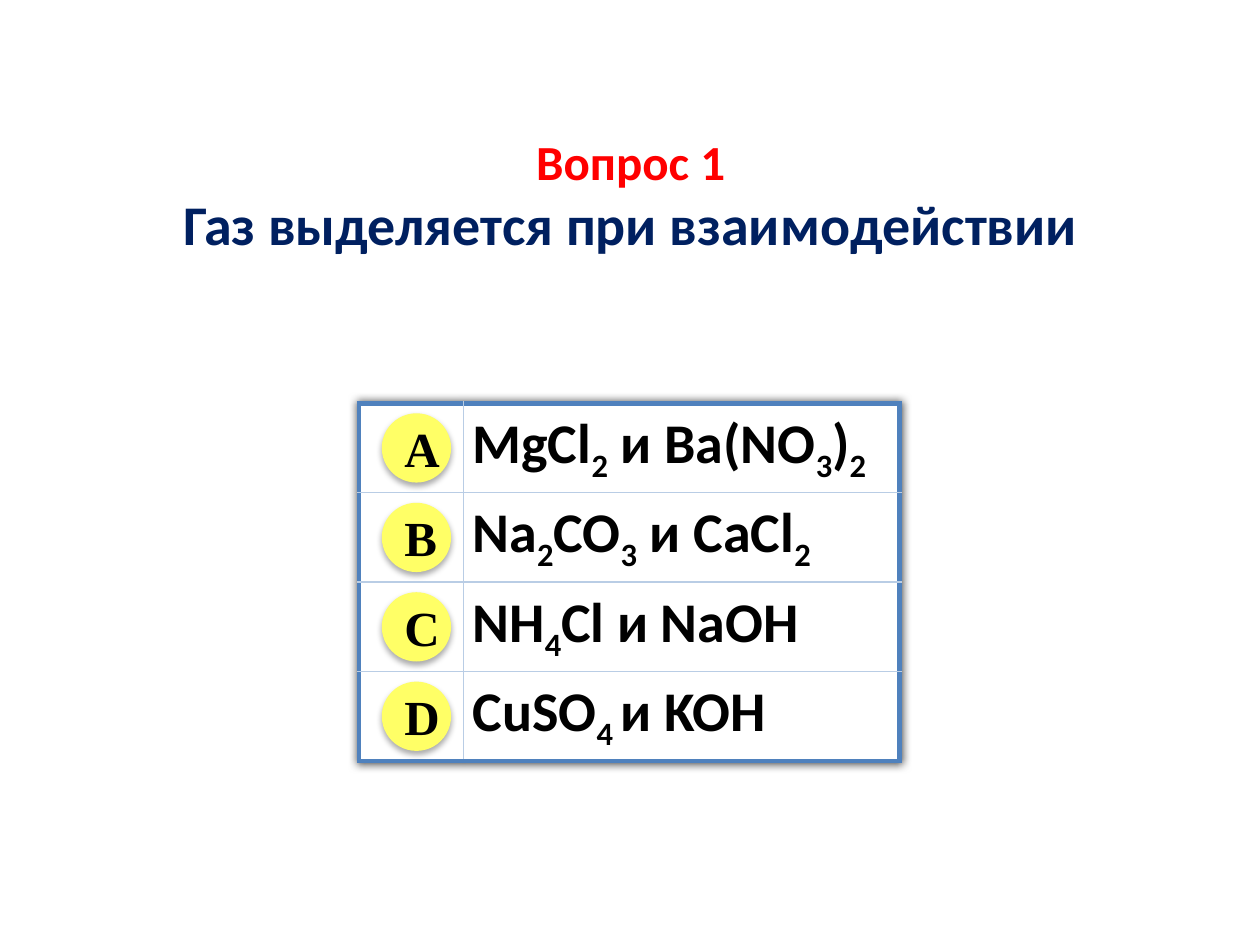
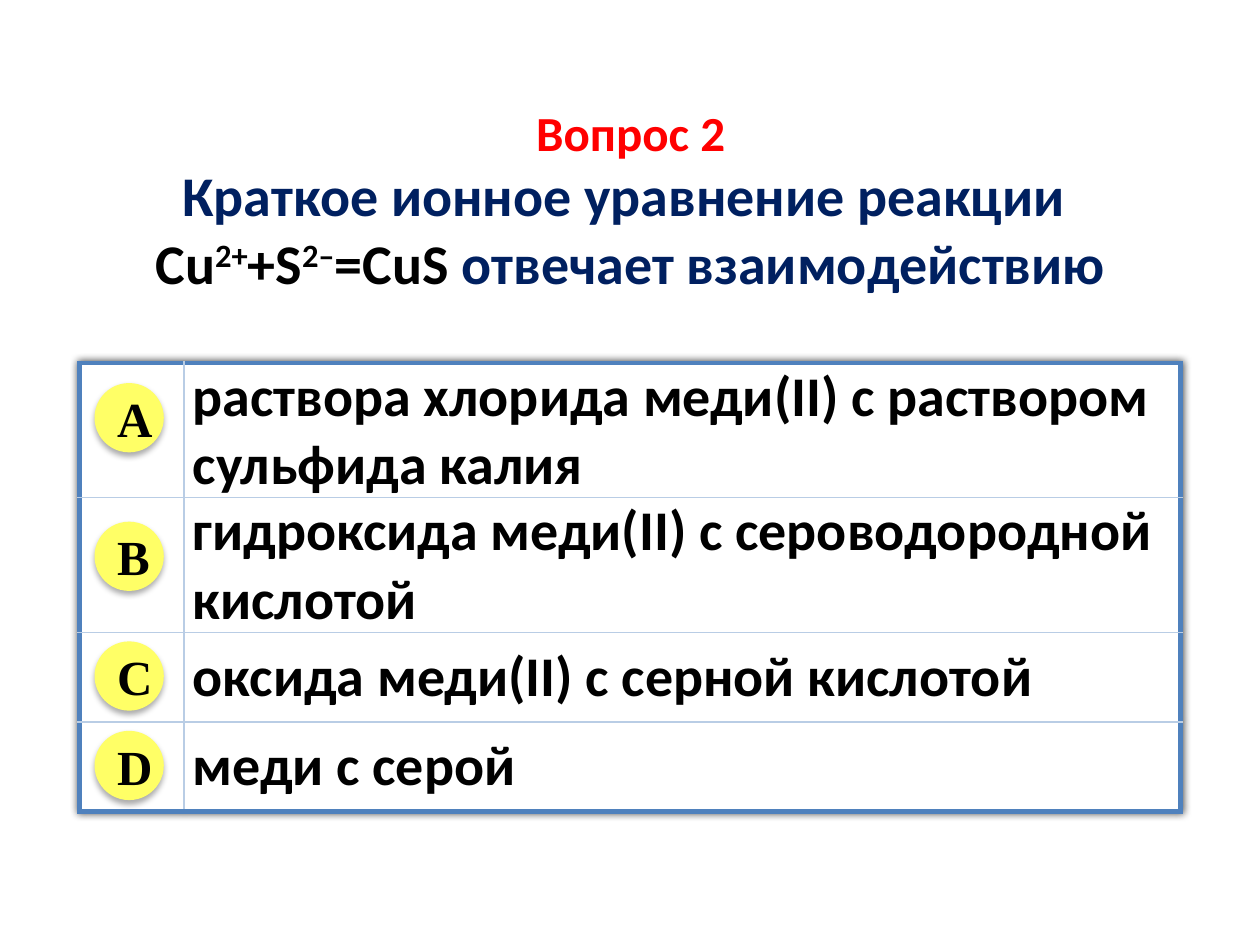
from pptx import Presentation
from pptx.dml.color import RGBColor
from pptx.enum import shapes, text
from pptx.oxml import parse_xml
from pptx.oxml.ns import nsdecls
from pptx.util import Inches, Pt

RED = RGBColor(0xFF, 0x00, 0x00)
NAVY = RGBColor(0x00, 0x20, 0x60)
BLACK = RGBColor(0x00, 0x00, 0x00)
WHITE = RGBColor(0xFF, 0xFF, 0xFF)
YELLOW = RGBColor(0xFF, 0xFF, 0x66)
FRAME_BLUE = RGBColor(0x4F, 0x81, 0xBD)
GRID_BLUE = RGBColor(0xB9, 0xCD, 0xE5)

BODY_FONT = "Calibri"
BADGE_FONT = "Times New Roman"
SUBSCRIPT, SUPERSCRIPT = -25, 30
LETTER_COLUMN = 0.83
BADGE_SIZE = 0.55


def shadow_xml(opacity, blur, distance=0):
    """Effect list with a black shadow falling downwards; lengths in points."""
    return parse_xml(
        f'<a:effectLst {nsdecls("a")}><a:outerShdw blurRad="{Pt(blur)}" '
        f'dist="{Pt(distance)}" dir="5400000" algn="ctr" rotWithShape="0">'
        f'<a:srgbClr val="000000"><a:alpha val="{opacity * 1000}"/></a:srgbClr>'
        '</a:outerShdw></a:effectLst>')


def style_paragraph(paragraph, size, font=BODY_FONT):
    paragraph.font.name = font
    paragraph.font.size = Pt(size)
    paragraph.font.bold = True


def add_formula(paragraph, formula, color, baseline):
    """Write text whose raised or lowered parts stand between bars."""
    for index, part in enumerate(formula.split("|")):
        if part:
            run = paragraph.add_run()
            run.text = part
            run.font.color.rgb = color
            if index % 2:
                run._r.get_or_add_rPr().set("baseline", str(baseline * 1000))


def add_question(slide, top, height, number, lines):
    """Fill the title: a red heading, then lines of (formula, colour) parts."""
    title = slide.shapes.title
    title.left, title.top = Inches(0.24), Inches(top)
    title.width, title.height = Inches(9.53), Inches(height)
    title.fill.solid()
    title.fill.fore_color.rgb = WHITE
    frame = title.text_frame
    frame.word_wrap = True
    frame.auto_size = text.MSO_AUTO_SIZE.SHAPE_TO_FIT_TEXT
    frame.vertical_anchor = text.MSO_ANCHOR.TOP
    heading = [(f"Вопрос {number}", RED)]
    for index, parts in enumerate([heading] + lines):
        paragraph = frame.add_paragraph() if index else frame.paragraphs[0]
        paragraph.alignment = text.PP_ALIGN.CENTER
        style_paragraph(paragraph, 32 if index else 28)
        for formula, color in parts:
            add_formula(paragraph, formula, color, SUPERSCRIPT)


def set_borders(cell, framed_sides):
    for side in "LRTB":
        color, width = (FRAME_BLUE, 3) if side in framed_sides else (GRID_BLUE, 1)
        cell._tc.get_or_add_tcPr().append(parse_xml(
            f'<a:ln{side} {nsdecls("a")} w="{Pt(width)}"><a:solidFill>'
            f'<a:srgbClr val="{color}"/></a:solidFill></a:ln{side}>'))


def add_badge(slide, left, top, letter):
    badge = slide.shapes.add_shape(
        shapes.MSO_SHAPE.OVAL, Inches(left), Inches(top),
        Inches(BADGE_SIZE), Inches(BADGE_SIZE))
    badge.fill.solid()
    badge.fill.fore_color.rgb = YELLOW
    badge.line.fill.background()
    badge._element.spPr.append(shadow_xml(32, 3.5, 2.2))
    badge.text_frame.vertical_anchor = text.MSO_ANCHOR.MIDDLE
    paragraph = badge.text_frame.paragraphs[0]
    paragraph.text = letter
    paragraph.alignment = text.PP_ALIGN.CENTER
    style_paragraph(paragraph, 28, BADGE_FONT)
    paragraph.font.color.rgb = BLACK


def add_answers(slide, left, top, width, badge_left, answers):
    """Draw the framed table; answers are (formula, row height, badge offset)."""
    total = sum(height for _, height, _ in answers)
    table = slide.shapes.add_table(
        len(answers), 2, Inches(left), Inches(top), Inches(width), Inches(total)).table
    table.first_row = table.horz_banding = False
    table._tbl.tblPr.insert(0, shadow_xml(75, 5))
    table.columns[0].width = Inches(LETTER_COLUMN)
    table.columns[1].width = Inches(width - LETTER_COLUMN)

    row_top = top
    for row, (formula, height, badge_offset) in enumerate(answers):
        table.rows[row].height = Inches(height)
        ends = ("T" if row == 0 else "") + ("B" if row == len(answers) - 1 else "")
        for column, outer_side in enumerate("LR"):
            cell = table.cell(row, column)
            set_borders(cell, outer_side + ends)
            cell.fill.solid()
            cell.fill.fore_color.rgb = WHITE
        cell.vertical_anchor = text.MSO_ANCHOR.MIDDLE
        cell.margin_left = cell.margin_right = Inches(0.07)
        cell.margin_top = cell.margin_bottom = 0
        paragraph = cell.text_frame.paragraphs[0]
        style_paragraph(paragraph, 32)
        add_formula(paragraph, formula, BLACK, SUBSCRIPT)
        add_badge(slide, badge_left, row_top + badge_offset, "ABCD"[row])
        row_top += height


def main():
    deck = Presentation()
    deck.slide_width, deck.slide_height = Inches(10), Inches(7.5)
    title_only = deck.slide_layouts[5]

    gas = deck.slides.add_slide(title_only)
    add_question(gas, 0.99, 1.11, 1, [[("Газ выделяется при взаимодействии", NAVY)]])
    reagents = ["MgCl|2| и Ba(NO|3|)|2", "Na|2|CO|3| и CaCl|2",
                "NH|4|Cl и NaOH", "CuSO|4 |и KOH"]
    add_answers(gas, 2.85, 3.2, 4.29, 3.03,
                [(pair, 0.71, 0.08) for pair in reagents])

    copper = deck.slides.add_slide(title_only)
    add_question(copper, 0.76, 1.65, 2, [
        [("Краткое ионное уравнение реакции ", NAVY)],
        [("Cu|2+|+S|2–|=CuS", BLACK), (" отвечает взаимодействию", NAVY)]])
    add_answers(copper, 0.63, 2.88, 8.74, 0.75, [
        ("раствора хлорида меди(II) с раствором сульфида калия", 1.07, 0.16),
        ("гидроксида меди(II) с сероводородной кислотой", 1.07, 0.19),
        ("оксида меди(II) с серной кислотой", 0.71, 0.07),
        ("меди с серой", 0.71, 0.07)])

    deck.save("out.pptx")


if __name__ == "__main__":
    main()
